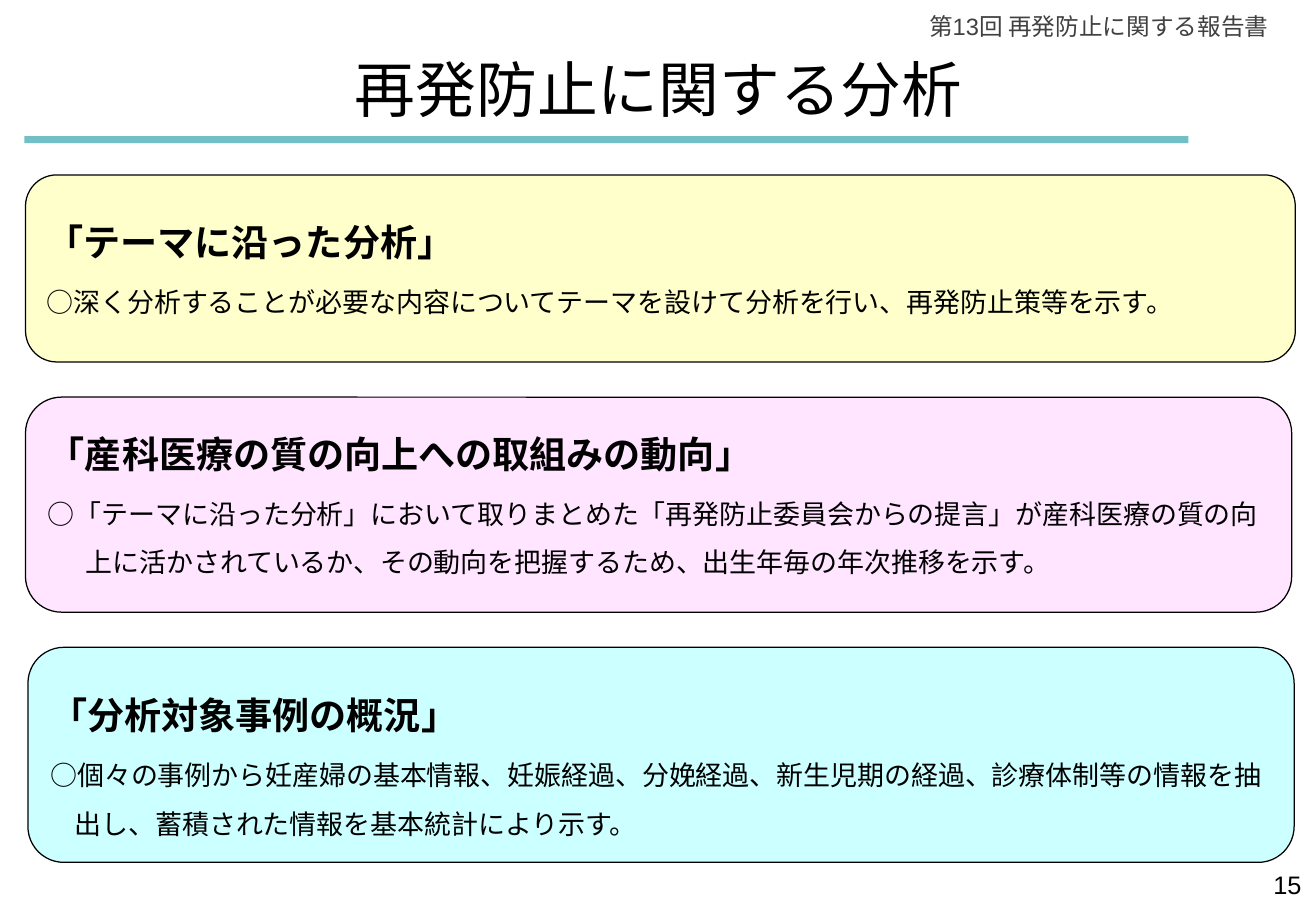
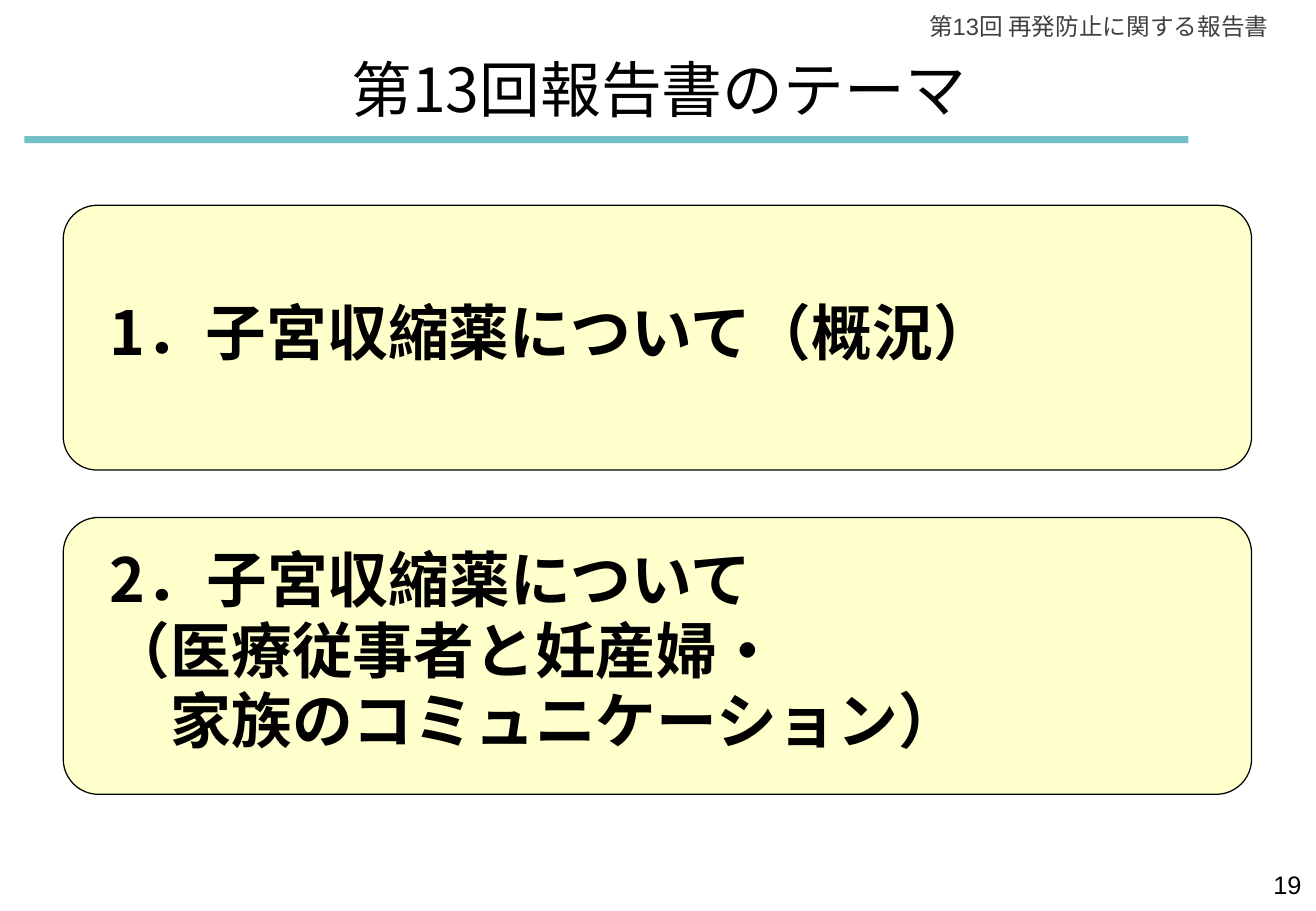
from lxml import etree
from pptx import Presentation
from pptx.dml.color import RGBColor
from pptx.enum import shapes, text
from pptx.oxml.ns import qn
from pptx.util import Inches, Pt

BLACK = RGBColor(0x00, 0x00, 0x00)
GRAY = RGBColor(0x40, 0x40, 0x40)
TEAL = RGBColor(0x72, 0xBF, 0xC5)
YELLOW = RGBColor(0xFF, 0xFF, 0xCC)
PINK = RGBColor(0xFF, 0xE5, 0xFF)
CYAN = RGBColor(0xCC, 0xFF, 0xFF)

LATIN = "Arial"
JAPANESE = "Noto Sans CJK JP"
LEFT, CENTER, RIGHT = text.PP_ALIGN.LEFT, text.PP_ALIGN.CENTER, text.PP_ALIGN.RIGHT


def style_paragraph(p, size, font=JAPANESE, color=BLACK, bold=False, align=LEFT):
    p.alignment = align
    p.font.size = Pt(size)
    p.font.name = font
    p.font.bold = bold
    p.font.color.rgb = color
    if font == JAPANESE:
        props = p._p.pPr.find(qn("a:defRPr"))
        etree.SubElement(props, qn("a:ea")).set("typeface", font)


def indent(p, left, first):
    """Set the left margin and first-line indent, in inches."""
    p_pr = p._p.get_or_add_pPr()
    p_pr.set("marL", str(Inches(left)))
    p_pr.set("indent", str(Inches(first)))


def add_label(s, box, words, size, wrap=True, anchor=text.MSO_ANCHOR.TOP, **style):
    tf = s.shapes.add_textbox(*map(Inches, box)).text_frame
    tf.word_wrap = wrap
    tf.vertical_anchor = anchor
    p = tf.paragraphs[0]
    p.text = words
    style_paragraph(p, size, **style)


def add_block(s, kind, box, fill):
    sp = s.shapes.add_shape(kind, *map(Inches, box))
    sp.shadow.inherit = False
    sp.fill.solid()
    sp.fill.fore_color.rgb = fill
    sp.line.fill.background()
    return sp


def add_panel(s, box, fill, corner):
    """Add an outlined rounded panel and return its text frame."""
    sp = add_block(s, shapes.MSO_SHAPE.ROUNDED_RECTANGLE, box, fill)
    sp.adjustments[0] = corner
    sp.line.color.rgb = BLACK
    sp.line.width = Pt(0.75)
    tf = sp.text_frame
    tf.word_wrap = True
    tf.vertical_anchor = text.MSO_ANCHOR.MIDDLE
    return tf


def add_analysis(s, box, fill, heading, body, hang, heading_spacing=1.0):
    tf = add_panel(s, box, fill, 0.167)
    p = tf.paragraphs[0]
    p.text = heading
    p.line_spacing = heading_spacing
    indent(p, 0.31, -0.31)
    style_paragraph(p, 22, bold=True)
    p = tf.add_paragraph()
    p.text = body
    p.line_spacing = 1.5
    p.space_before = Pt(3.2)
    indent(p, hang, -hang)
    style_paragraph(p, 16)


def add_theme(s, top, height, lines):
    """Add a theme panel; lines are (left margin, words) pairs."""
    tf = add_panel(s, (0.52, top, 9.78, height), YELLOW, 0.128)
    for i, (left, words) in enumerate(lines):
        p = tf.add_paragraph() if i else tf.paragraphs[0]
        p.text = words
        p.line_spacing = 0.8
        if i:
            p.space_before = Pt(7.2)
        indent(p, left, 0.2)
        style_paragraph(p, 36, bold=True)


def add_slide(prs, title, number):
    s = prs.slides.add_slide(prs.slide_layouts[6])
    add_block(s, shapes.MSO_SHAPE.RECTANGLE, (0.2, 1.12, 9.58, 0.06), TEAL)
    add_label(s, (7.38, 0.05, 3.16, 0.34), "第13回 再発防止に関する報告書", 14,
              font=LATIN, color=GRAY, align=RIGHT)
    add_label(s, (2.23, 0.38, 6.38, 0.7), title, 36, wrap=False,
              anchor=text.MSO_ANCHOR.MIDDLE, align=CENTER)
    add_label(s, (8.28, 7.11, 2.53, 0.39), str(number), 15, font=LATIN, align=RIGHT)
    return s


def main():
    prs = Presentation()
    prs.slide_width, prs.slide_height = Inches(10.83), Inches(7.5)

    s = add_slide(prs, "再発防止に関する分析", 15)
    add_analysis(s, (0.21, 1.44, 10.45, 1.54), YELLOW, "「テーマに沿った分析」",
                 "○深く分析することが必要な内容についてテーマを設けて分析を行い、再発防止策等を示す。",
                 0.2)
    add_analysis(s, (0.21, 3.27, 10.42, 1.77), PINK, "「産科医療の質の向上への取組みの動向」",
                 "○「テーマに沿った分析」において取りまとめた「再発防止委員会からの提言」が"
                 "産科医療の質の向上に活かされているか、その動向を把握するため、"
                 "出生年毎の年次推移を示す。", 0.31)
    add_analysis(s, (0.23, 5.33, 10.42, 1.77), CYAN, "「分析対象事例の概況」",
                 "○個々の事例から妊産婦の基本情報、妊娠経過、分娩経過、新生児期の経過、"
                 "診療体制等の情報を抽出し、蓄積された情報を基本統計により示す。",
                 0.2, heading_spacing=1.5)

    s = add_slide(prs, "第13回報告書のテーマ", 19)
    add_theme(s, 1.69, 2.18, [(0, "1．子宮収縮薬について（概況）")])
    add_theme(s, 4.26, 2.28, [(0, "2．子宮収縮薬について"),
                              (0, "（医療従事者と妊産婦・"),
                              (0.5, "家族のコミュニケーション）")])
    prs.save("out.pptx")


if __name__ == "__main__":
    main()
